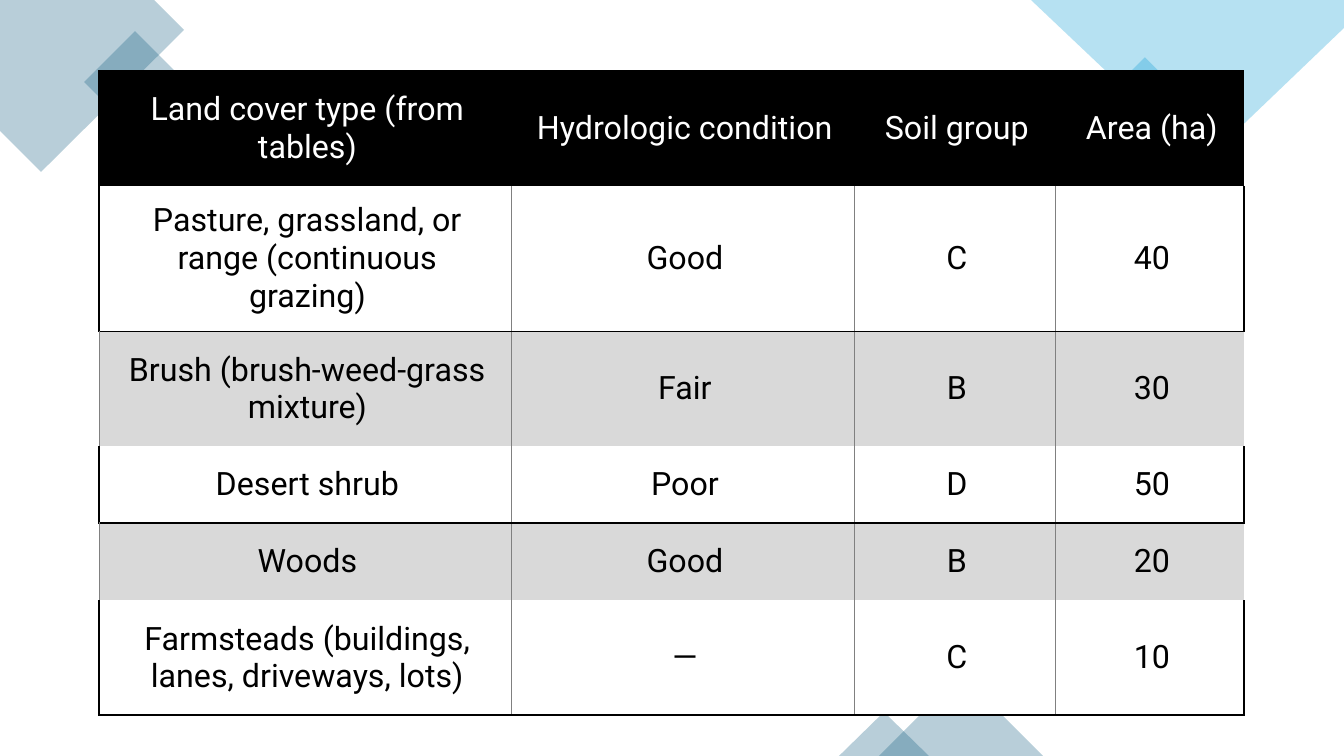
from lxml import etree
from pptx import Presentation
from pptx.dml.color import RGBColor
from pptx.enum.shapes import MSO_SHAPE as SHAPE
from pptx.enum.text import MSO_ANCHOR as ANCHOR, PP_ALIGN as ALIGN
from pptx.oxml.ns import qn
from pptx.util import Pt

# Content
ROWS = [
    ("Land cover type (from tables)", "Hydrologic condition", "Soil group", "Area (ha)"),
    ("Pasture, grassland, or range (continuous grazing)", "Good", "C", "40"),
    ("Brush (brush-weed-grass mixture)", "Fair", "B", "30"),
    ("Desert shrub", "Poor", "D", "50"),
    ("Woods", "Good", "B", "20"),
    ("Farmsteads (buildings, lanes, driveways, lots)", "—", "C", "10"),
]
COLORS = {"black": "000000", "white": "FFFFFF", "band": "D9D9D9",
          "rule": "808080", "teal": "156082", "sky": "0F9ED5"}

# Layout in px
SLIDE_SIZE = (1344, 756)
TABLE_LEFT, TABLE_TOP = 99, 71
COLUMN_WIDTHS = [412, 343, 201, 189]
ROW_HEIGHTS = [115, 115, 115, 77, 77, 115]
INSET_LEFT, INSET = 21, 16

# Decorations, back to front: outline points, or preset with box and rotation
DECORATIONS = [
    ("teal", [(154, 0), (0, 0), (0, 131), (41, 172), (184, 30)]),
    ("teal", (SHAPE.RECTANGLE, (99, 46, 72, 72), 315)),
    ("sky", (SHAPE.RECTANGLE, (1107, 73, 76, 76), 315)),
    ("sky", [(1344, 0), (1031, 0), (1203, 163), (1344, 28)]),
    ("teal", (SHAPE.ISOSCELES_TRIANGLE, (879, 674, 164, 82), 0)),
    ("teal", (SHAPE.ISOSCELES_TRIANGLE, (839, 712, 90, 44), 0)),
]
ALPHA = "30000"
EMU_PER_PX = 914400 / 100.8

THICK, THIN = ("black", 1.5), ("rule", 0.5)


def px(length):
    return round(length * EMU_PER_PX)


def color(name):
    return RGBColor.from_string(COLORS[name])


def add_decoration(slide, color_name, geometry):
    if isinstance(geometry, list):
        builder = slide.shapes.build_freeform(*geometry[0], scale=EMU_PER_PX)
        builder.add_line_segments(geometry[1:], close=True)
        shape = builder.convert_to_shape()
    else:
        preset, box, rotation = geometry
        shape = slide.shapes.add_shape(preset, *map(px, box))
        shape.rotation = rotation
    shape.shadow.inherit = False
    shape.line.fill.background()
    shape.fill.solid()
    shape.fill.fore_color.rgb = color(color_name)
    tint = shape.fill._xPr.find(qn("a:solidFill"))[0]
    etree.SubElement(tint, qn("a:alpha")).set("val", ALPHA)


def cell_borders(row, column):
    """Borders by side: header, then white and grey rows in turn."""
    last = len(COLUMN_WIDTHS) - 1
    if row == 0:
        return {"L": THICK, "T": THICK, "R": THICK if column < last else None}
    if row % 2 == 0:
        return {"L": THIN, "T": THICK, "R": THIN if column < last else None}
    return {"L": THIN if column else THICK,
            "R": THIN if column < last else THICK, "B": THICK}


def set_borders(cell, borders):
    properties = cell._tc.get_or_add_tcPr()
    for index, side in enumerate("LRTB"):
        line = etree.Element(qn(f"a:ln{side}"))
        border = borders.get(side)
        if border:
            color_name, width = border
            line.set("w", str(Pt(width)))
            fill = etree.SubElement(line, qn("a:solidFill"))
            etree.SubElement(fill, qn("a:srgbClr")).set("val", COLORS[color_name])
        else:
            etree.SubElement(line, qn("a:noFill"))
        properties.insert(index, line)


def add_land_cover_table(slide):
    frame = slide.shapes.add_table(
        len(ROWS), len(COLUMN_WIDTHS), px(TABLE_LEFT), px(TABLE_TOP),
        px(sum(COLUMN_WIDTHS)), px(sum(ROW_HEIGHTS)))
    table = frame.table
    table.first_row = table.horz_banding = False
    for column, width in zip(table.columns, COLUMN_WIDTHS):
        column.width = px(width)
    for row, height in zip(table.rows, ROW_HEIGHTS):
        row.height = px(height)

    for r, texts in enumerate(ROWS):
        background = "black" if r == 0 else "white" if r % 2 else "band"
        for c, text in enumerate(texts):
            cell = table.cell(r, c)
            cell.text = text
            cell.vertical_anchor = ANCHOR.MIDDLE
            cell.margin_left = px(INSET_LEFT)
            cell.margin_top = cell.margin_right = cell.margin_bottom = px(INSET)
            cell.fill.solid()
            cell.fill.fore_color.rgb = color(background)
            set_borders(cell, cell_borders(r, c))
            paragraph = cell.text_frame.paragraphs[0]
            paragraph.alignment = ALIGN.CENTER
            paragraph.font.name = "Roboto"
            paragraph.font.size = Pt(23)
            paragraph.font.bold = False
            paragraph.font.color.rgb = color("white" if r == 0 else "black")


def main():
    presentation = Presentation()
    presentation.slide_width, presentation.slide_height = map(px, SLIDE_SIZE)
    slide = presentation.slides.add_slide(presentation.slide_layouts[6])
    for color_name, geometry in DECORATIONS:
        add_decoration(slide, color_name, geometry)
    add_land_cover_table(slide)
    presentation.save("out.pptx")


if __name__ == "__main__":
    main()
